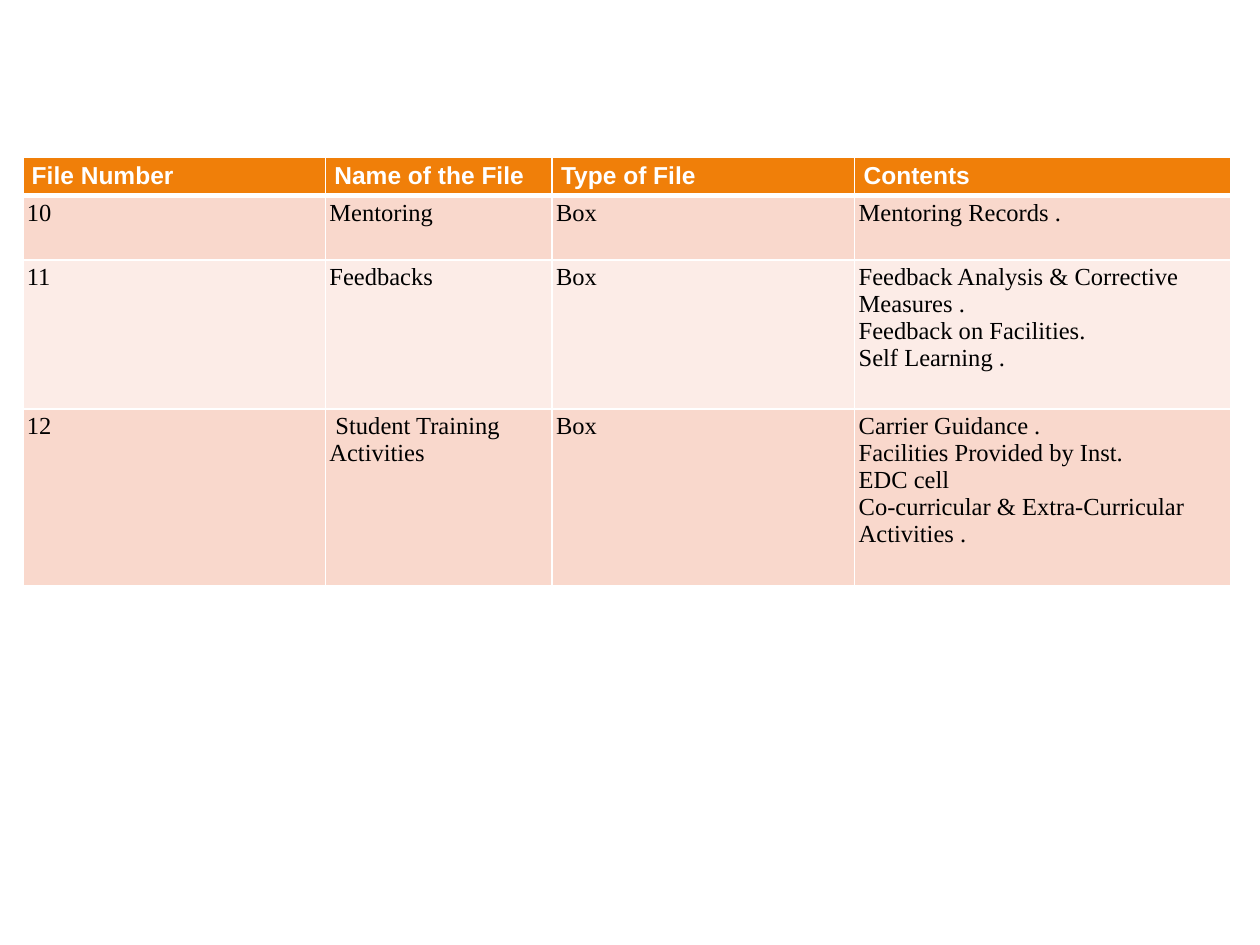
import pptx
import pptx.dml.color
import pptx.oxml
import pptx.oxml.ns
import pptx.util
from pptx.util import Cm

# Content: one tuple per row; a cell is a list of paragraphs
HEADINGS = ("File Number", "Name of the File", "Type of File", "Contents")
FILES = [
    ("10", "Mentoring", "Box", ["Mentoring Records ."]),
    ("11", "Feedbacks", "Box", [
        "Feedback Analysis & Corrective Measures .",
        "Feedback on Facilities.",
        "Self Learning .",
    ]),
    ("12", " Student Training Activities", "Box", [
        "Carrier Guidance .",
        "Facilities Provided by Inst.",
        "EDC cell",
        "Co-curricular & Extra-Curricular Activities .",
    ]),
]

THEME = {
    "header_fill": "F07F09",
    "bands": ("F9D8CC", "FCECE7"),
    "header_text": "FFFFFF",
    "body_text": "000000",
    "border": "FFFFFF",
    "header_font": "Arial",
    "body_font": "Times New Roman",
    "size": 14,
    "thin": 1,
    "thick": 3,
}

# Layout, in centimetres
TABLE_LEFT, TABLE_TOP = 0.46, 3.18
COLUMN_WIDTHS = (6.1, 4.57, 6.1, 7.59)
ROW_HEIGHTS = (0.76, 1.3, 3, 3.57)
HEADER_MARGINS = (0.18, 0.1)
BODY_MARGINS = (0.08, 0.08)


def rgb(value):
    return pptx.dml.color.RGBColor.from_string(value)


def write_cell(cell, text, *, fill, color, font, margins, bold=False):
    """Fill a cell with one paragraph, or with one per list item."""
    cell.fill.solid()
    cell.fill.fore_color.rgb = rgb(fill)
    cell.margin_left = cell.margin_right = Cm(margins[0])
    cell.margin_top = cell.margin_bottom = Cm(margins[1])
    lines = [text] if isinstance(text, str) else text
    frame = cell.text_frame
    for index, line in enumerate(lines):
        para = frame.add_paragraph() if index else frame.paragraphs[0]
        span = para.add_run()
        span.text = line
        span.font.name = font
        span.font.size = pptx.util.Pt(THEME["size"])
        span.font.bold = bold
        span.font.color.rgb = rgb(color)


def set_borders(cell, **widths):
    """Draw the cell borders; the schema wants them ahead of the fill."""
    properties = cell._tc.get_or_add_tcPr()
    for index, side in enumerate("LRTB"):
        width = pptx.util.Pt(widths.get(side, THEME["thin"]))
        properties.insert(index, pptx.oxml.parse_xml(
            f'<a:ln{side} {pptx.oxml.ns.nsdecls("a")} w="{width}"><a:solidFill>'
            f'<a:srgbClr val="{THEME["border"]}"/></a:solidFill></a:ln{side}>'))


def main():
    deck = pptx.Presentation()
    deck.slide_width, deck.slide_height = Cm(25.4), Cm(19.05)
    page = deck.slides.add_slide(deck.slide_layouts.get_by_name("Blank"))

    # Table grid
    table = page.shapes.add_table(
        len(ROW_HEIGHTS), len(COLUMN_WIDTHS), Cm(TABLE_LEFT), Cm(TABLE_TOP),
        Cm(sum(COLUMN_WIDTHS)), Cm(sum(ROW_HEIGHTS))).table
    for column, width in zip(table.columns, COLUMN_WIDTHS):
        column.width = Cm(width)
    for row, height in zip(table.rows, ROW_HEIGHTS):
        row.height = Cm(height)

    # Header row
    for cell, heading in zip(table.rows[0].cells, HEADINGS):
        write_cell(cell, heading, fill=THEME["header_fill"],
                   color=THEME["header_text"], font=THEME["header_font"],
                   margins=HEADER_MARGINS, bold=True)
        set_borders(cell, B=THEME["thick"])

    # File rows, in alternating bands
    for number, record in enumerate(FILES, start=1):
        top = THEME["thick"] if number == 1 else THEME["thin"]
        for cell, text in zip(table.rows[number].cells, record):
            write_cell(cell, text, fill=THEME["bands"][(number - 1) % 2],
                       color=THEME["body_text"], font=THEME["body_font"],
                       margins=BODY_MARGINS)
            set_borders(cell, T=top)

    deck.save("out.pptx")


if __name__ == "__main__":
    main()
